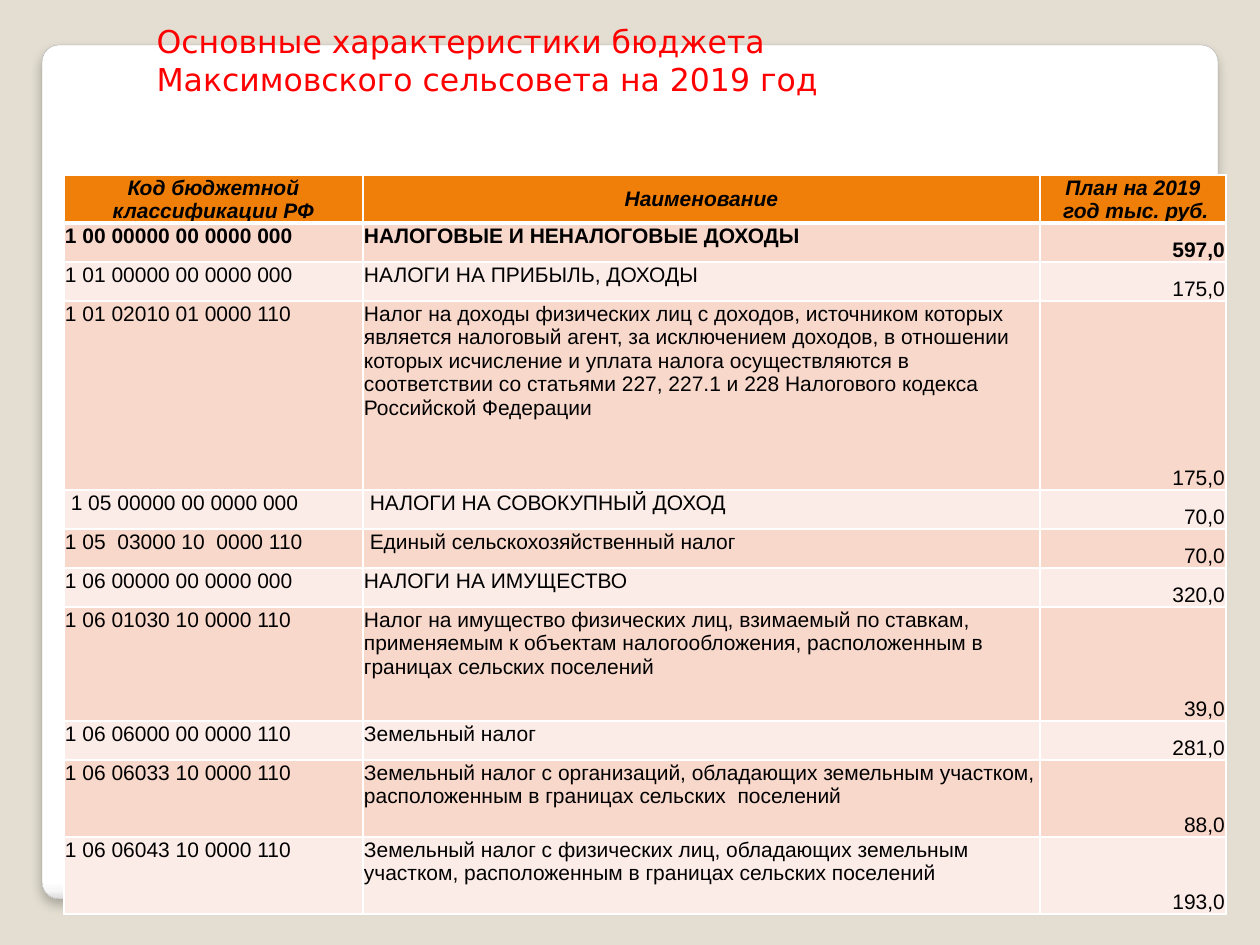
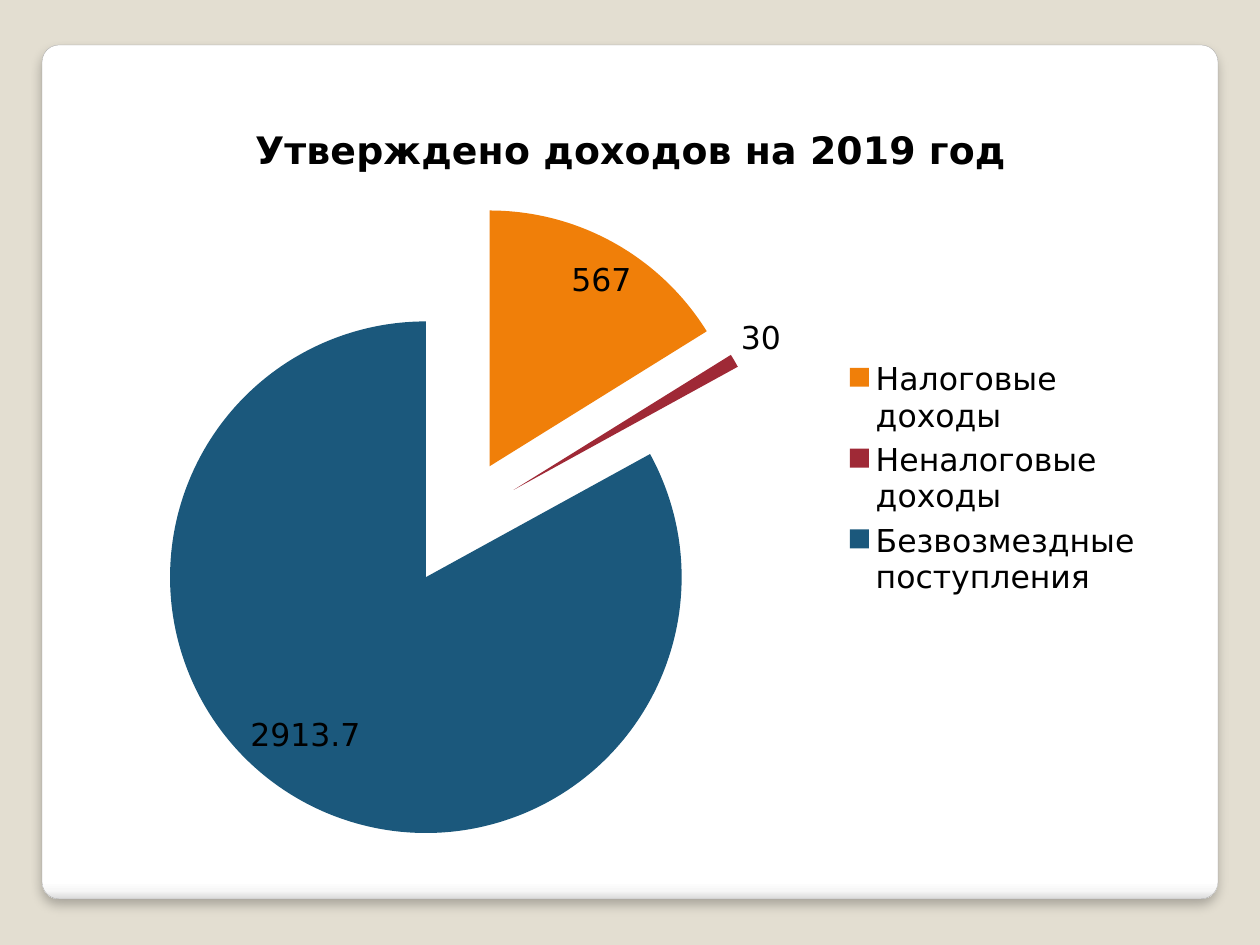
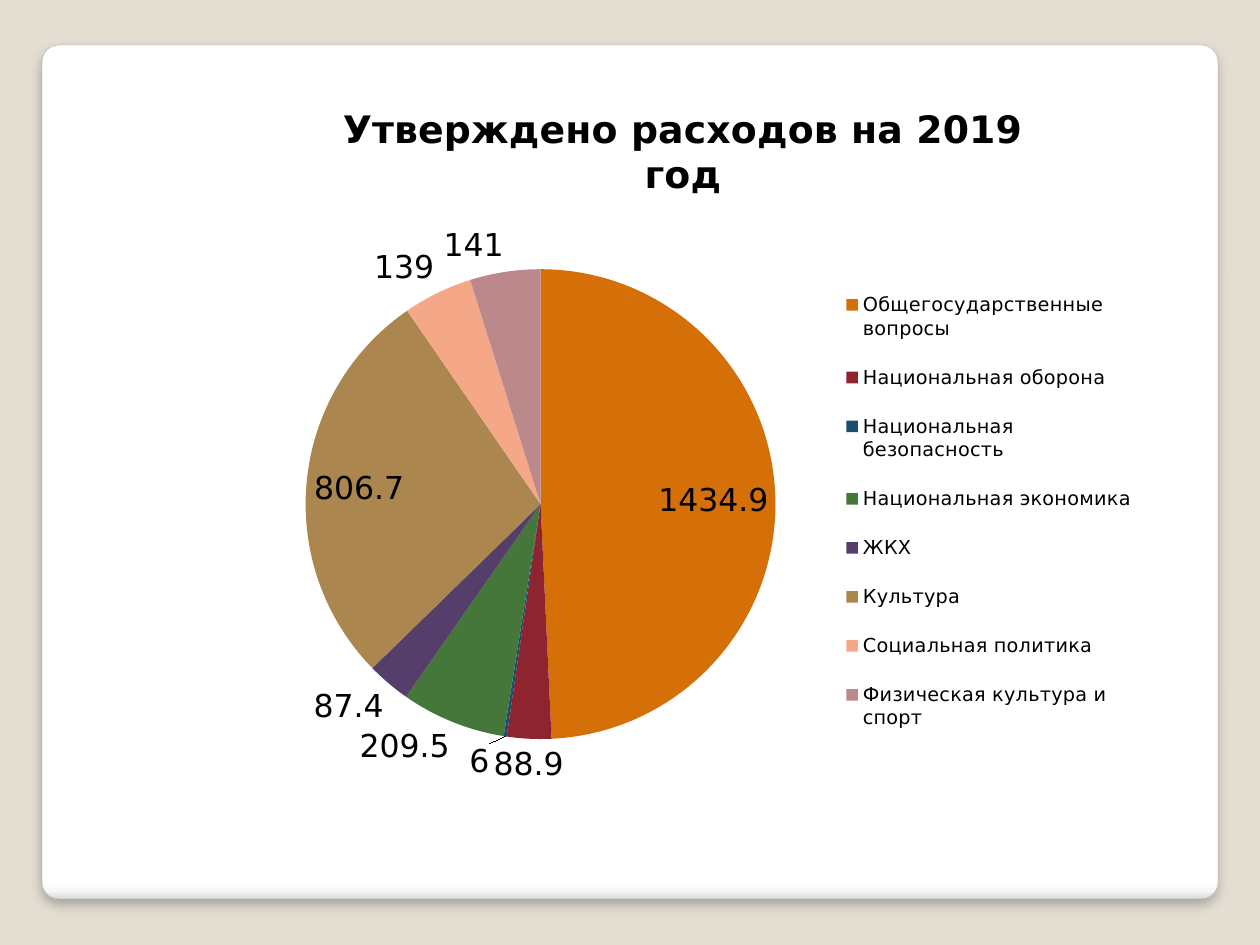
from pptx import Presentation
from pptx.chart.data import CategoryChartData as Data
from pptx.dml.color import RGBColor as RGB
from pptx.enum.chart import (XL_CHART_TYPE as Kind, XL_LABEL_POSITION as Spot,
                             XL_LEGEND_POSITION as Side)
from pptx.enum.shapes import MSO_SHAPE as Shape
from pptx.enum.text import MSO_ANCHOR as Anchor, PP_ALIGN as Align
from pptx.oxml import parse_xml
from pptx.oxml.ns import nsdecls, qn
from pptx.util import Pt

PX = 914400 / 126  # one px in EMU

SAND = RGB(0xE3, 0xDE, 0xD1)
WHITE = RGB(0xFF, 0xFF, 0xFF)
SNOW = RGB(0xF7, 0xF7, 0xF7)
MIST = RGB(0xDA, 0xDA, 0xDA)
GREY = RGB(0xA4, 0xA4, 0xA4)
BLACK = RGB(0x00, 0x00, 0x00)
RED = RGB(0xFF, 0x00, 0x00)
ORANGE = RGB(0xF0, 0x7F, 0x09)
ROSE = RGB(0xF9, 0xD8, 0xCC)
BLUSH = RGB(0xFC, 0xEC, 0xE7)
WINE = RGB(0x9F, 0x29, 0x36)
BLUE = RGB(0x1B, 0x58, 0x7C)
SPEND = [RGB(0xD5, 0x70, 0x08), RGB(0x8D, 0x24, 0x30), RGB(0x18, 0x4E, 0x6E),
         RGB(0x45, 0x76, 0x3A), RGB(0x55, 0x3F, 0x6A), RGB(0xAB, 0x87, 0x4F),
         RGB(0xF4, 0xA8, 0x87), RGB(0xBB, 0x89, 0x8B)]

SANS = "DejaVu Sans"
HEAD = dict(name=SANS, size=Pt(18), bold=False)
BASE = dict(name=SANS, size=Pt(18))
NAME = dict(name=SANS, size=Pt(21.6), bold=True)
CELL = dict(name="Arial", size=Pt(12), bold=False, italic=False)

COLS = [299, 677, 186]
ROWS = [
    (48, "Код бюджетной классификации РФ", "Наименование",
     "План на 2019\n год тыс. руб."),
    (39, "1 00 00000 00 0000 000", "НАЛОГОВЫЕ И НЕНАЛОГОВЫЕ ДОХОДЫ", "597,0"),
    (39, "1 01 00000 00 0000 000", "НАЛОГИ НА ПРИБЫЛЬ, ДОХОДЫ", "175,0"),
    (189, "1 01 02010 01 0000 110",
     "Налог на доходы физических лиц с доходов, источником которых является "
     "налоговый агент, за исключением доходов, в отношении которых исчисление "
     "и уплата налога осуществляются в соответствии со статьями 227, 227.1 и "
     "228 Налогового кодекса Российской Федерации", "175,0"),
    (39, " 1 05 00000 00 0000 000", " НАЛОГИ НА СОВОКУПНЫЙ ДОХОД", "70,0"),
    (39, "1 05  03000 10  0000 110", " Единый сельскохозяйственный налог", "70,0"),
    (39, "1 06 00000 00 0000 000", "НАЛОГИ НА ИМУЩЕСТВО", "320,0"),
    (114, "1 06 01030 10 0000 110",
     "Налог на имущество физических лиц, взимаемый по ставкам, применяемым к "
     "объектам налогообложения, расположенным в границах сельских поселений",
     "39,0"),
    (39, "1 06 06000 00 0000 110", "Земельный налог", "281,0"),
    (77, "1 06 06033 10 0000 110",
     "Земельный налог с организаций, обладающих земельным участком, "
     "расположенным в границах сельских  поселений", "88,0"),
    (77, "1 06 06043 10 0000 110",
     "Земельный налог с физических лиц, обладающих земельным участком, "
     "расположенным в границах сельских поселений", "193,0"),
]


def emu(*vals):
    return [round(v * PX) for v in vals]


def put(obj, vals):
    for key, val in vals.items():
        setattr(obj, key, val)


def style(font, vals, color=BLACK):
    put(font, vals)
    font.color.rgb = color


# Shared backdrop: sand ground and white card on the master
def backdrop(master, slide, box):
    master.background.fill.solid()
    master.background.fill.fore_color.rgb = SAND
    card = slide.shapes.add_shape(Shape.ROUNDED_RECTANGLE, *emu(*box))
    card.adjustments[0] = 0.02
    card.fill.gradient()
    card.fill.gradient_angle = 270
    card.line.color.rgb = GREY
    card.line.width = Pt(0.16)
    card.shadow.inherit = False
    props = card.element.spPr
    stops = props.find(".//" + qn("a:gsLst"))
    del stops[:]
    for pos, color in [(0, WHITE), (98, WHITE), (99, SNOW), (100, MIST)]:
        stops.append(parse_xml(
            f'<a:gs {nsdecls("a")} pos="{pos * 1000}">'
            f'<a:srgbClr val="{color}"/></a:gs>'))
    props.find(qn("a:effectLst")).append(parse_xml(
        f'<a:outerShdw {nsdecls("a")} blurRad="{Pt(6)}" dist="{Pt(4)}" '
        f'dir="5400000" algn="t" rotWithShape="0"><a:srgbClr val="{BLACK}">'
        '<a:alpha val="25000"/></a:srgbClr></a:outerShdw>'))
    card.element.nvSpPr.cNvPr.id = 99
    master.shapes.element.insert(2, card.element)


def heading(slide, box, text):
    title = slide.shapes.title
    put(title, dict(zip(("left", "top", "width", "height"), emu(*box))))
    frame = title.text_frame
    put(frame, dict(text=text, word_wrap=True, vertical_anchor=Anchor.TOP))
    para = frame.paragraphs[0]
    para.alignment = Align.LEFT
    style(para.font, HEAD, RED)


def edge(cell, foot):
    props = cell._tc.get_or_add_tcPr()
    for side, width in zip("LRTB", (1, 1, 1, foot)):
        props.append(parse_xml(
            f'<a:ln{side} {nsdecls("a")} w="{Pt(width)}"><a:solidFill>'
            f'<a:srgbClr val="{WHITE}"/></a:solidFill></a:ln{side}>'))


# Budget table: header row, then banded rows with sums at the right
def budget(slide, left, top):
    size = sum(COLS), sum(row[0] for row in ROWS)
    table = slide.shapes.add_table(
        len(ROWS), len(COLS), *emu(left, top, *size)).table
    for col, width in zip(table.columns, COLS):
        col.width = emu(width)[0]
    for r, (high, *texts) in enumerate(ROWS):
        table.rows[r].height = emu(high)[0]
        for c, text in enumerate(texts):
            cell = table.cell(r, c)
            edge(cell, 1 if r else 3)
            cell.fill.solid()
            cell.fill.fore_color.rgb = (BLUSH, ROSE)[r % 2] if r else ORANGE
            side = Align.RIGHT if c == 2 else Align.LEFT
            hold = Anchor.BOTTOM if c == 2 else Anchor.TOP
            if r == 0:
                side, hold = Align.CENTER, Anchor.MIDDLE
            one = emu(1)[0]
            put(cell, dict(text=text, vertical_anchor=hold, margin_left=one,
                           margin_right=one, margin_top=one, margin_bottom=0))
            for para in cell.text_frame.paragraphs:
                para.alignment = side
                style(para.font, CELL | dict(bold=r < 2, italic=r == 0))


# Manual place of a chart part, as px inside the chart box
def layout(part, box, area, inner=False):
    old = part.find(qn("c:layout"))
    if old is not None:
        part.remove(old)
    x, y, w, h = area
    marks = dict(xMode="edge", yMode="edge", x=x / box[2], y=y / box[3],
                 w=w / box[2], h=h / box[3])
    if inner:
        marks = dict(layoutTarget="inner") | marks
    body = "".join(
        f'<c:{key} val="{val if isinstance(val, str) else round(val, 3)}"/>'
        for key, val in marks.items())
    node = parse_xml(f'<c:layout {nsdecls("c")}><c:manualLayout>{body}'
                     '</c:manualLayout></c:layout>')
    spot = part.find(qn("c:legendPos"))
    if spot is None:
        part.insert(0, node)
    else:
        spot.addnext(node)


def pie(slide, box, title, parts, colors, plot, keys, size=18, burst=0):
    data = Data()
    data.categories = list(parts)
    data.add_series("Series 1", list(parts.values()))
    chart = slide.shapes.add_chart(Kind.PIE, *emu(*box), data).chart
    style(chart.font, BASE)

    # Title and legend
    chart.has_title = chart.has_legend = True
    frame = chart.chart_title.text_frame
    frame.text = title
    style(frame.paragraphs[0].runs[0].font, NAME)
    chart.chart_title.include_in_layout = False
    put(chart.legend, dict(position=Side.RIGHT, include_in_layout=False))
    style(chart.legend.font, BASE | dict(size=Pt(size)))
    layout(chart.legend._element, box, keys)

    # Slices and labels
    area = chart.plots[0]
    put(area, dict(vary_by_categories=True, has_data_labels=True))
    put(area.data_labels, dict(show_value=True, show_percentage=False,
                               position=Spot.BEST_FIT))
    style(area.data_labels.font, BASE)
    line = area.series[0]
    if burst:
        line._element.find(qn("c:tx")).addnext(
            parse_xml(f'<c:explosion {nsdecls("c")} val="{burst}"/>'))
    for i, color in enumerate(colors):
        fill = line.points[i].format.fill
        fill.solid()
        fill.fore_color.rgb = color
    layout(chart._chartSpace.chart.plotArea, box, plot, True)


def main():
    deck = Presentation()
    deck.slide_width, deck.slide_height = emu(1260, 945)
    plan, income, costs = [deck.slides.add_slide(deck.slide_layouts[i])
                           for i in (5, 6, 6)]
    backdrop(deck.slide_master, plan, (42, 45, 1176, 854))

    budget(plan, 64, 175)
    heading(plan, (144, 16, 801, 90),
            "Основные характеристики бюджета Максимовского сельсовета на 2019 год")

    pie(income, (105, 96, 1052, 764), "Утверждено доходов на 2019 год",
        {"Налоговые доходы": 567, "Неналоговые доходы": 30,
         "Безвозмездные поступления": 2913.7},
        [ORANGE, WINE, BLUE], (34, 106, 640, 640), (737, 258, 300, 250),
        burst=25)

    pie(costs, (210, 76, 946, 724), "Утверждено расходов на 2019 год",
        {"Общегосударственные вопросы": 1434.9, "Национальная оборона": 88.9,
         "Национальная безопасность": 6, "Национальная экономика": 209.5,
         "ЖКХ": 87.4, "Культура": 806.7, "Социальная политика": 139,
         "Физическая культура и спорт": 141},
        SPEND, (96, 193, 470, 470), (626, 192, 306, 488), size=11)

    deck.save("out.pptx")


if __name__ == "__main__":
    main()
